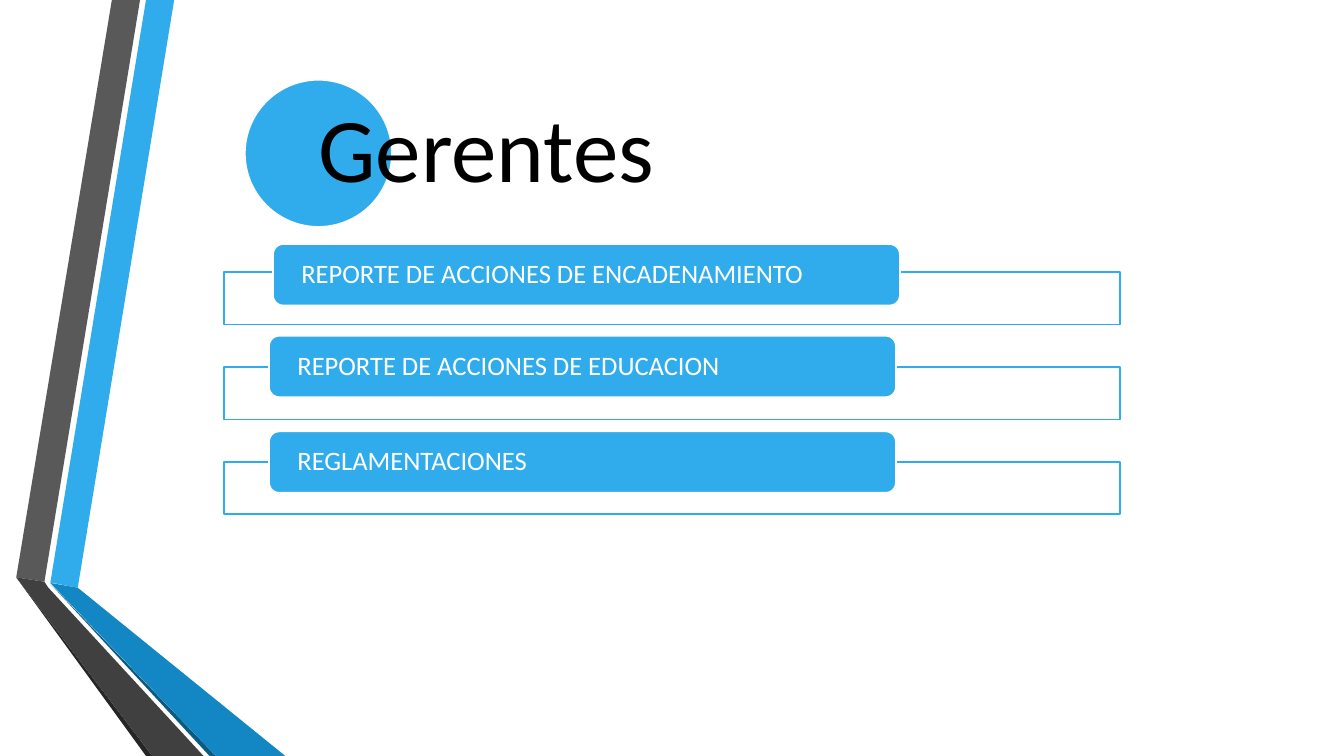
from pptx import Presentation
from pptx.dml.color import RGBColor
from pptx.enum.shapes import MSO_SHAPE
from pptx.enum.text import MSO_ANCHOR, PP_ALIGN
from pptx.util import Cm, Pt

BLUE = RGBColor(0x30, 0xAC, 0xEC)
DEEP_BLUE = RGBColor(0x12, 0x87, 0xC3)
NAVY = RGBColor(0x0C, 0x5A, 0x82)
GREY = RGBColor(0x59, 0x59, 0x59)
CHARCOAL = RGBColor(0x40, 0x40, 0x40)
NEAR_BLACK = RGBColor(0x26, 0x26, 0x26)
BLACK = RGBColor(0, 0, 0)
WHITE = RGBColor(0xFF, 0xFF, 0xFF)

# Ribbon facets from back to front: colour and corners in cm
RIBBONS = [
    (BLUE, [(1.27, 14.68), (1.96, 14.81), (4.39, 0), (3.68, 0)]),
    (GREY, [(3.53, 0), (2.82, 0), (0.41, 14.55), (1.12, 14.66)]),
    (NEAR_BLACK, [(0.41, 14.55), (3.68, 19.05), (3.84, 19.05)]),
    (NAVY, [(1.27, 14.71), (5.28, 19.05), (5.44, 19.05)]),
    (DEEP_BLUE, [(1.27, 14.69), (5.44, 19.05), (7.19, 19.05), (1.96, 14.81)]),
    (CHARCOAL, [(5.13, 19.05), (1.22, 14.81), (1.12, 14.66), (0.41, 14.55),
                (3.84, 19.05)]),
]

# Report label with the left and top of its tab in cm
REPORTS = [
    ("REPORTE DE ACCIONES DE ENCADENAMIENTO", 6.88, 6.15),
    ("REPORTE DE ACCIONES DE EDUCACION", 6.78, 8.46),
    ("REGLAMENTACIONES", 6.78, 10.87),
]
FRAME_TOP, FRAME_STEP = 6.86, 2.39


def add_ribbon(slide, color, corners):
    points = [(Cm(x), Cm(y)) for x, y in corners]
    builder = slide.shapes.build_freeform(*points[0], scale=1.0)
    builder.add_line_segments(points[1:], close=True)
    sp = builder.convert_to_shape()
    sp.shadow.inherit = False
    sp.fill.solid()
    sp.fill.fore_color.rgb = color
    sp.line.fill.background()


def add_outlined(slide, kind, left, top, width, height, fill, line):
    sp = slide.shapes.add_shape(kind, Cm(left), Cm(top), Cm(width), Cm(height))
    sp.shadow.inherit = False
    sp.fill.solid()
    sp.fill.fore_color.rgb = fill
    sp.line.color.rgb = line
    sp.line.width = Pt(1.25)
    return sp


def set_text(sp, text, size, color, inset=0):
    """Write one left-aligned, vertically centred line with side insets in cm."""
    tf = sp.text_frame
    tf.word_wrap = True
    tf.vertical_anchor = MSO_ANCHOR.MIDDLE
    tf.margin_left = tf.margin_right = Cm(inset)
    tf.text = text
    p = tf.paragraphs[0]
    p.alignment = PP_ALIGN.LEFT
    p.line_spacing = 0.9
    font = p.runs[0].font
    font.name = "Calibri"
    font.size = Pt(size)
    font.color.rgb = color


def add_title(slide, text):
    add_outlined(slide, MSO_SHAPE.OVAL, 6.17, 2.01, 3.71, 3.71, BLUE, WHITE)
    box = slide.shapes.add_textbox(Cm(8.03), Cm(2.01), Cm(19.76), Cm(3.71))
    set_text(box, text, 65, BLACK)


def add_report(slide, frame_top, label, left, top):
    add_outlined(slide, MSO_SHAPE.RECTANGLE, 5.64, frame_top, 22.58, 1.32,
                 WHITE, BLUE)
    tab = add_outlined(slide, MSO_SHAPE.ROUNDED_RECTANGLE, left, top, 15.8, 1.55,
                       BLUE, WHITE)
    set_text(tab, label, 19, WHITE, inset=0.64)


def main():
    prs = Presentation()
    prs.slide_width, prs.slide_height = Cm(33.87), Cm(19.05)
    slide = prs.slides.add_slide(prs.slide_layouts[6])
    for color, corners in RIBBONS:
        add_ribbon(slide, color, corners)
    add_title(slide, "Gerentes")
    for i, (label, left, top) in enumerate(REPORTS):
        add_report(slide, FRAME_TOP + i * FRAME_STEP, label, left, top)
    prs.save("out.pptx")


if __name__ == "__main__":
    main()
